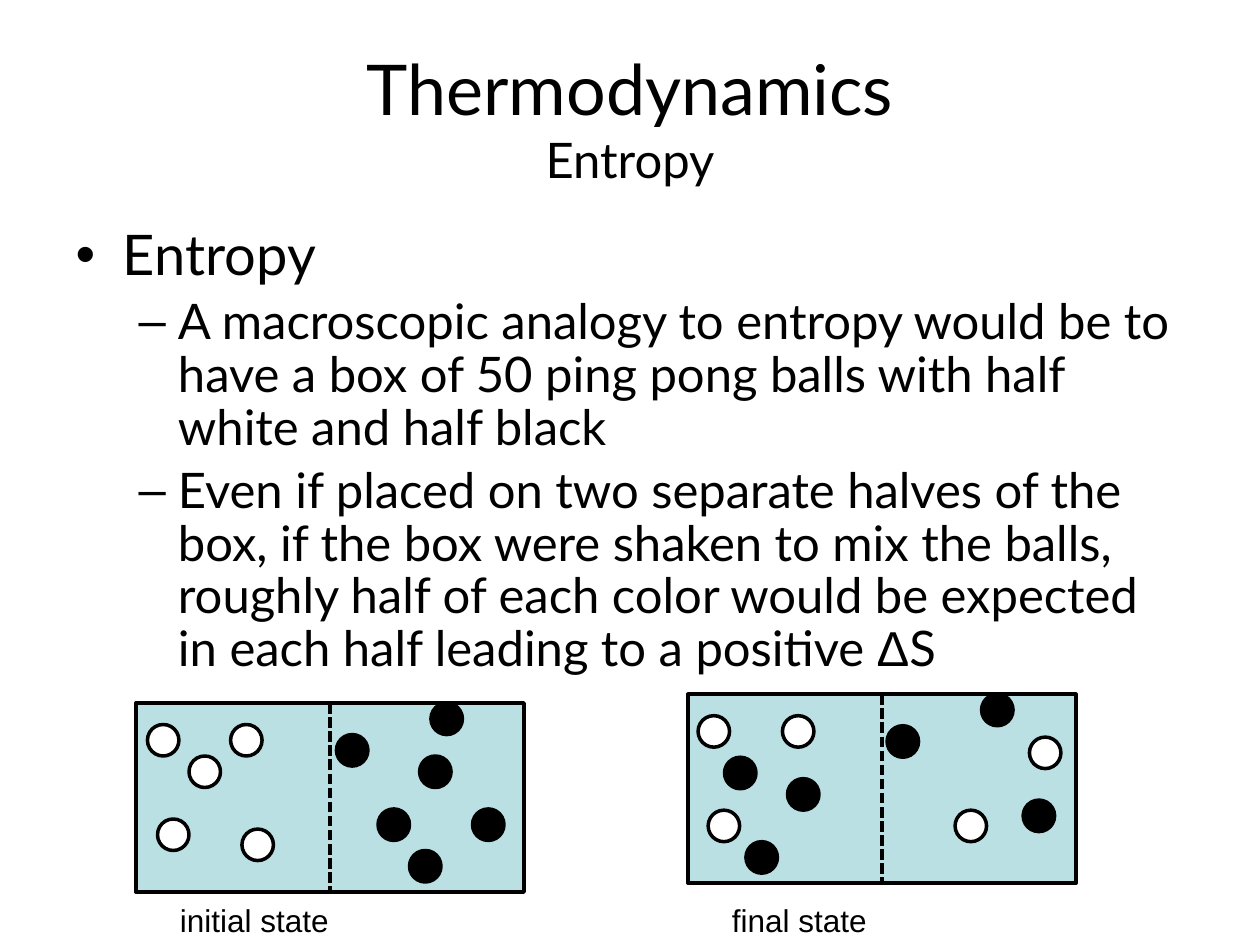
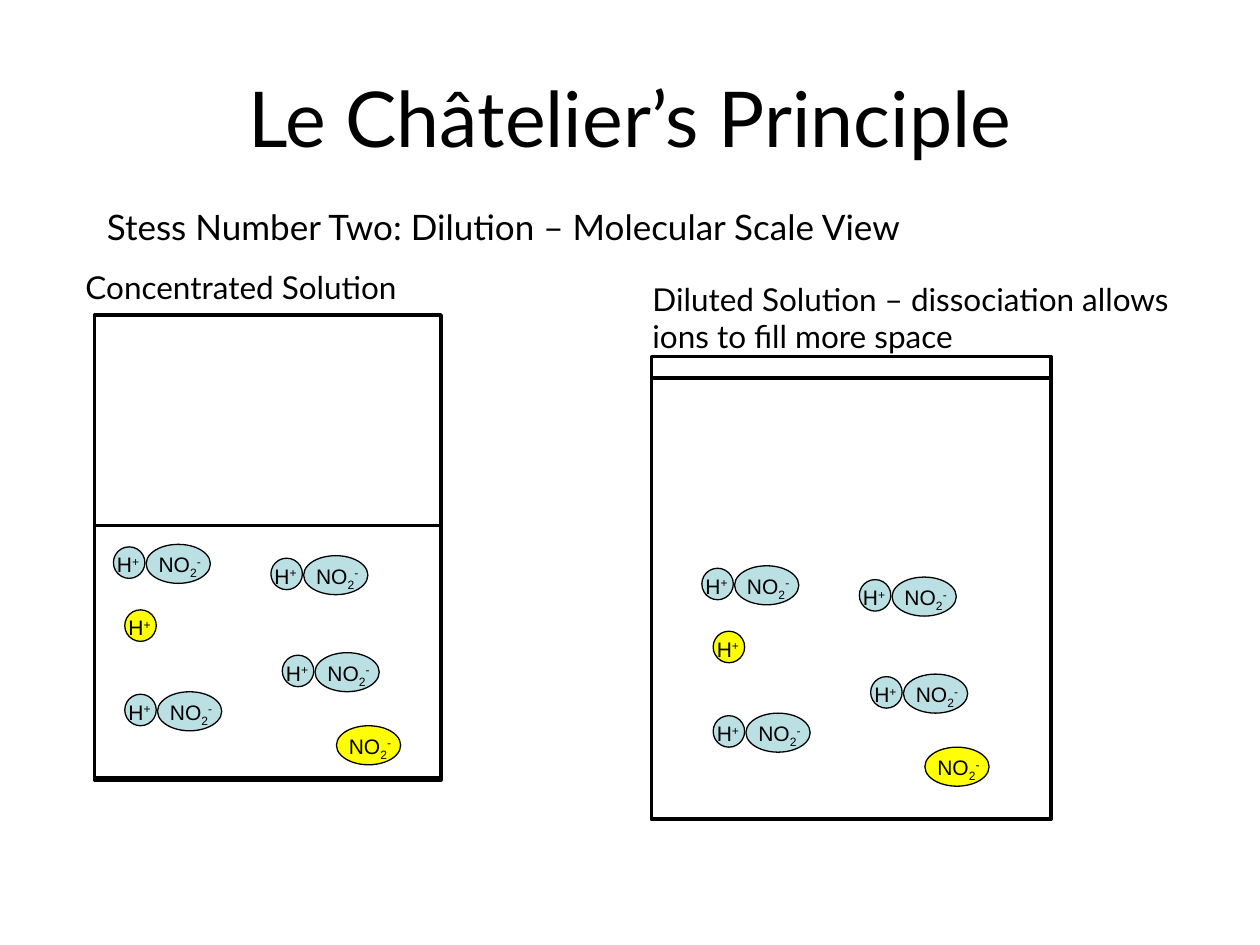
import pptx
import pptx.dml.color
import pptx.enum.dml
import pptx.enum.shapes
import pptx.enum.text
import pptx.oxml
import pptx.util

Inches = pptx.util.Inches
Shape = pptx.enum.shapes.MSO_SHAPE
RGBColor = pptx.dml.color.RGBColor

BLACK = RGBColor(0x00, 0x00, 0x00)
WHITE = RGBColor(0xFF, 0xFF, 0xFF)
PALE_BLUE = RGBColor(0xBB, 0xE0, 0xE3)
YELLOW = RGBColor(0xFF, 0xFF, 0x00)
HEADING_FONT = "Lato"
LABEL_FONT = "Arial"

BALL_SIZE = 0.25
BOX_SIZE = (3.08, 1.5)
HYDROGEN = [("H", 0), ("+", 30)]
NITRITE = [("NO", 0), ("2", -25), ("-", 30)]

# Ball places are measured from the corner of their box
INITIAL_WHITE = [(0.75, 0.17), (0.09, 0.17), (0.84, 1), (0.42, 0.42), (0.17, 0.92)]
INITIAL_BLACK = [(1.59, 0.25), (2.34, 0), (1.92, 0.84), (2.25, 0.42),
                 (2.67, 0.84), (2.17, 1.17)]
FINAL_WHITE = [(0.75, 0.17), (0.08, 0.17), (2.12, 0.92), (2.71, 0.34), (0.16, 0.92)]
FINAL_BLACK = [(1.58, 0.25), (2.33, 0), (0.29, 0.5), (0.79, 0.67),
               (2.66, 0.84), (0.46, 1.17)]

# Ion places in the concentrated solution, and their move in the diluted one
BOUND_PAIRS = [(2.08, 4.42), (2.17, 5.19), (0.92, 5.5), (0.83, 4.33)]
FREE_HYDROGEN = (0.92, 4.83)
FREE_NITRITE = (2.67, 5.77)
DILUTED_SHIFT = (4.67, 0.17)


def add_span(para, text, *, size, font=HEADING_FONT, baseline=0):
    span = para.add_run()
    span.text = text
    span.font.size = pptx.util.Pt(size)
    span.font.name = font
    span.font.color.rgb = BLACK
    if baseline:
        span._r.get_or_add_rPr().set("baseline", str(baseline * 1000))


def place(shape, left, top, width, height):
    shape.left, shape.top = Inches(left), Inches(top)
    shape.width, shape.height = Inches(width), Inches(height)


def add_title(page, lines):
    title = page.shapes.title
    place(title, 0.5, 0.3, 9, 1.25)
    title.text_frame.auto_size = pptx.enum.text.MSO_AUTO_SIZE.NONE
    para = title.text_frame.paragraphs[0]
    for index, (text, size) in enumerate(lines):
        if index:
            para.add_line_break()
        add_span(para, text, size=size)


def add_list(page, items):
    body = page.placeholders[1]
    place(body, 0.5, 1.75, 9, 3.67)
    frame = body.text_frame
    frame.auto_size = pptx.enum.text.MSO_AUTO_SIZE.NONE
    for index, (level, spans) in enumerate(items):
        para = frame.add_paragraph() if index else frame.paragraphs[0]
        para.level = level
        para.line_spacing = 0.9
        for text, font in spans:
            add_span(para, text, size=28 if level else 32, font=font)


def add_label(page, left, top, width, height, spans, **style):
    box = page.shapes.add_textbox(
        Inches(left), Inches(top), Inches(width), Inches(height))
    box.text_frame.word_wrap = True
    for text, baseline in spans:
        add_span(box.text_frame.paragraphs[0], text, baseline=baseline, **style)


def add_figure(page, kind, left, top, width, height, fill=None, line_width=2):
    figure = page.shapes.add_shape(
        kind, Inches(left), Inches(top), Inches(width), Inches(height))
    figure.shadow.inherit = False
    if fill is None:
        figure.fill.background()
    else:
        figure.fill.solid()
        figure.fill.fore_color.rgb = fill
    figure.line.color.rgb = BLACK
    figure.line.width = pptx.util.Pt(line_width)
    return figure


def add_divider(page, box):
    middle = box.left + box.width // 2
    divider = page.shapes.add_connector(
        pptx.enum.shapes.MSO_CONNECTOR.STRAIGHT,
        middle, box.top, middle, box.top + box.height)
    divider.begin_connect(box, 0)
    divider.end_connect(box, 2)
    divider.line.color.rgb = BLACK
    divider.line.width = pptx.util.Pt(2)
    divider.line.dash_style = pptx.enum.dml.MSO_LINE.SQUARE_DOT
    properties = divider._element.spPr
    properties.append(pptx.oxml.parse_xml(
        '<a:effectLst xmlns:a="http://schemas.openxmlformats.org/drawingml/2006/main"/>'))


def add_ball_box(page, left, top, caption, white_balls, black_balls):
    box = add_figure(page, Shape.RECTANGLE, left, top, *BOX_SIZE, PALE_BLUE)
    add_divider(page, box)
    for fill, balls in ((WHITE, white_balls), (BLACK, black_balls)):
        for x, y in balls:
            add_figure(page, Shape.OVAL, left + x, top + y,
                       BALL_SIZE, BALL_SIZE, fill)
    add_label(page, left + 0.25, 7.1, 2.25, 0.4, [(caption, 0)],
              size=18, font=LABEL_FONT)


def add_hydrogen(page, left, top, fill):
    add_figure(page, Shape.OVAL, left + 0.07, top + 0.01, 0.25, 0.25, fill, 0.75)
    add_label(page, left, top, 0.42, 0.3, HYDROGEN, size=12, font=LABEL_FONT)


def add_nitrite(page, left, top, fill):
    add_figure(page, Shape.OVAL, left, top - 0.01, 0.51, 0.31, fill, 0.75)
    add_label(page, left, top, 0.75, 0.3, NITRITE, size=12, font=LABEL_FONT)


def add_ions(page, shift_x=0, shift_y=0):
    for x, y in BOUND_PAIRS:
        add_hydrogen(page, x + shift_x, y + shift_y, PALE_BLUE)
        add_nitrite(page, x + shift_x + 0.33, y + shift_y, PALE_BLUE)
    for add_ion, (x, y) in ((add_hydrogen, FREE_HYDROGEN), (add_nitrite, FREE_NITRITE)):
        add_ion(page, x + shift_x, y + shift_y, YELLOW)


def build_entropy(deck):
    page = deck.slides.add_slide(deck.slide_layouts[1])
    add_title(page, [("Thermodynamics", 40), ("Entropy", 28)])
    add_list(page, [
        (0, [("Entropy", HEADING_FONT)]),
        (1, [("A macroscopic analogy to entropy would be to have a box of 50 "
              "ping pong balls with half white and half black", HEADING_FONT)]),
        (1, [("Even if placed on two separate halves of the box, if the box were "
              "shaken to mix the balls, roughly half of each color would be "
              "expected in each half leading to a positive ", HEADING_FONT),
             ("Δ", LABEL_FONT), ("S", HEADING_FONT)]),
    ])
    add_ball_box(page, 1.08, 5.58, "initial state", INITIAL_WHITE, INITIAL_BLACK)
    add_ball_box(page, 5.46, 5.51, "final state", FINAL_WHITE, FINAL_BLACK)


def build_dilution(deck):
    page = deck.slides.add_slide(deck.slide_layouts[5])
    add_title(page, [("Le Châtelier’s Principle", 44)])
    add_label(page, 0.75, 1.58, 8.33, 0.43,
              [("Stess Number Two: Dilution – Molecular Scale View", 0)], size=20)

    # Containers, each with its liquid
    for container in ((0.75, 2.5, 2.75, 3.69), (0.75, 4.17, 2.75, 2),
                      (5.17, 2.83, 3.17, 3.67), (5.17, 3, 3.17, 3.5)):
        add_figure(page, Shape.RECTANGLE, *container)
    add_label(page, 0.58, 2.08, 2.75, 0.4, [("Concentrated Solution", 0)], size=18)
    add_label(page, 5.08, 2.17, 4.33, 0.7,
              [("Diluted Solution – dissociation allows ions to fill more space", 0)],
              size=18)

    # Ions
    add_ions(page)
    add_ions(page, *DILUTED_SHIFT)


def main():
    deck = pptx.Presentation()
    deck.slide_width, deck.slide_height = Inches(10), Inches(7.5)
    build_entropy(deck)
    build_dilution(deck)
    deck.save("out.pptx")


if __name__ == "__main__":
    main()
